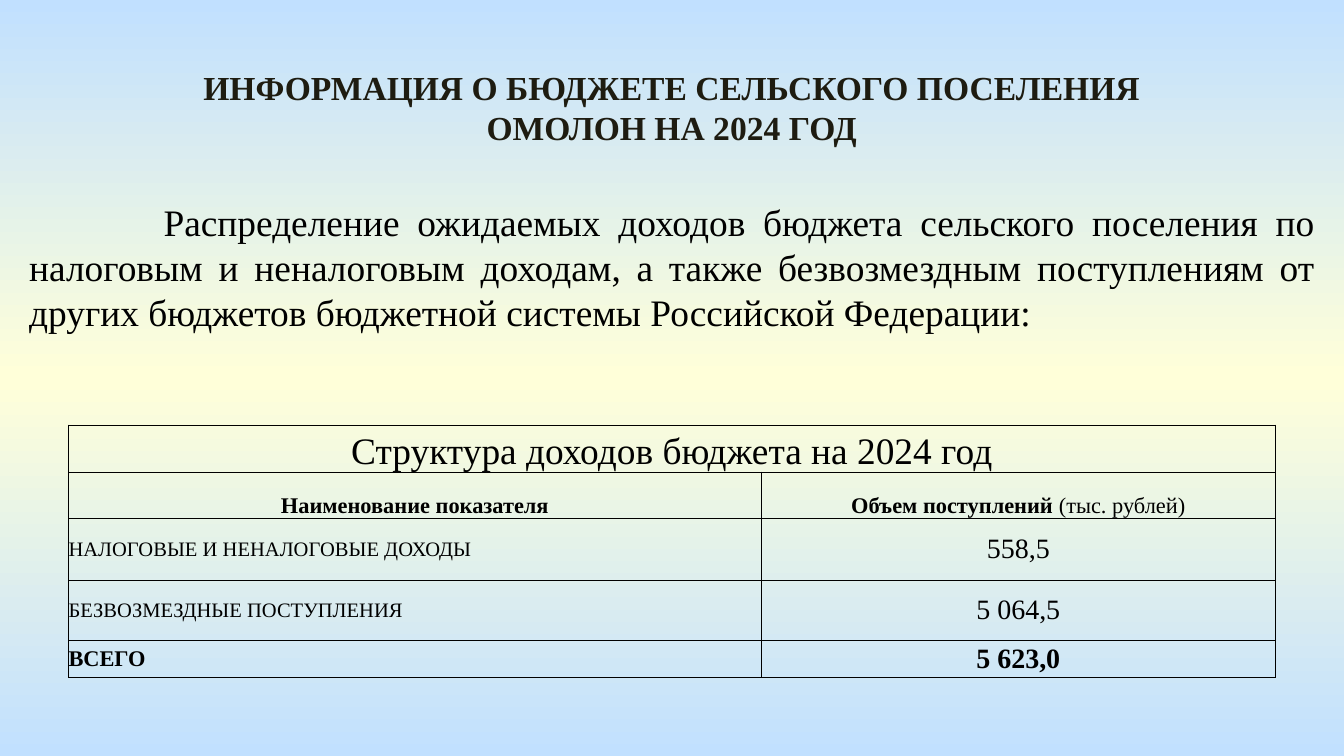
from copy import deepcopy

from lxml.etree import SubElement
from pptx import Presentation
from pptx.dml.color import RGBColor
from pptx.enum.shapes import MSO_SHAPE
from pptx.enum.text import MSO_ANCHOR, MSO_AUTO_SIZE, PP_ALIGN
from pptx.oxml.ns import qn
from pptx.util import Pt

COLORS = {"sky": "C1E0FF", "cream": "FFFFD9", "text": "000000", "title": "1E1C11"}
INTRO = ("Распределение ожидаемых доходов бюджета сельского поселения по налоговым "
         "и неналоговым доходам, а также безвозмездным поступлениям от других "
         "бюджетов бюджетной системы Российской Федерации:")
INCOME = [
    ("НАЛОГОВЫЕ И НЕНАЛОГОВЫЕ ДОХОДЫ", "558,5"),
    ("БЕЗВОЗМЕЗДНЫЕ ПОСТУПЛЕНИЯ", "5 064,5"),
]
COLUMN_WIDTHS = [371.2, 275.3]
ROW_HEIGHTS = [25.2, 24.8, 33.2, 32, 20.2]


def rgb(name):
    return RGBColor.from_string(COLORS[name])


def write(frame, text, size=12, bold=False, color="text", align=PP_ALIGN.CENTER,
          font="Times New Roman"):
    """Add a run to the first paragraph of the frame and return the paragraph."""
    para = frame.paragraphs[0]
    para.alignment = align
    span = para.add_run()
    span.text = text
    span.font.name = font
    span.font.size = Pt(size)
    span.font.bold = bold
    span.font.color.rgb = rgb(color)
    return para


def draw_borders(cell, width=0.5):
    properties = cell._tc.get_or_add_tcPr()
    for index, side in enumerate(("lnL", "lnR", "lnT", "lnB")):
        line = SubElement(properties, qn(f"a:{side}"), w=str(Pt(width)))
        fill = SubElement(line, qn("a:solidFill"))
        SubElement(fill, qn("a:srgbClr"), val=COLORS["text"])
        properties.insert(index, line)


class BudgetSlide:
    def __init__(self, deck):
        self.slide = deck.slides.add_slide(deck.slide_layouts[5])

    def background(self, *colors):
        """Fill the background with evenly spaced vertical gradient stops."""
        fill = self.slide.background.fill
        fill.gradient()
        fill.gradient_angle = 90
        stops = self.slide.element.find(".//" + qn("a:gsLst"))
        while len(stops) < len(colors):
            stops.append(deepcopy(stops[0]))
        for index, (stop, color) in enumerate(zip(fill.gradient_stops, colors)):
            stop.position = index / (len(colors) - 1)
            stop.color.rgb = rgb(color)

    def place(self, box, left, top, width, height):
        box.left, box.top = Pt(left), Pt(top)
        box.width, box.height = Pt(width), Pt(height)

    def title(self, text, *bounds):
        box = self.slide.shapes.title
        self.place(box, *bounds)
        frame = box.text_frame
        frame.word_wrap = True
        frame.auto_size = MSO_AUTO_SIZE.NONE
        frame.vertical_anchor = MSO_ANCHOR.TOP
        write(frame, text, size=18, bold=True, color="title")

    def panel(self, text, *bounds, indent=72):
        """Add a rectangle of text that shows the slide background as its fill."""
        box = self.slide.shapes.add_shape(MSO_SHAPE.RECTANGLE, *map(Pt, bounds))
        box.shadow.inherit = False
        box.line.fill.background()
        box.element.remove(box.element.find(qn("p:style")))
        box.element.set("useBgFill", "1")
        frame = box.text_frame
        frame.word_wrap = True
        frame.auto_size = MSO_AUTO_SIZE.SHAPE_TO_FIT_TEXT
        frame.vertical_anchor = MSO_ANCHOR.TOP
        para = write(frame, text, size=20, align=PP_ALIGN.JUSTIFY)
        para._p.get_or_add_pPr().set("indent", str(Pt(indent)))

    def table(self, left, top, widths, heights):
        shape = self.slide.shapes.add_table(
            len(heights), len(widths), Pt(left), Pt(top),
            Pt(sum(widths)), Pt(sum(heights)))
        table = shape.table
        table.first_row = table.horz_banding = False
        for column, width in zip(table.columns, widths):
            column.width = Pt(width)
        for row, height in zip(table.rows, heights):
            row.height = Pt(height)
        for cell in table.iter_cells():
            cell.margin_left = cell.margin_right = 0
            cell.margin_top = cell.margin_bottom = 0
            cell.vertical_anchor = MSO_ANCHOR.MIDDLE
            cell.fill.background()
            draw_borders(cell)
        return table

    def income_table(self):
        table = self.table(36.7, 227.7, COLUMN_WIDTHS, ROW_HEIGHTS)
        heading = table.cell(0, 0)
        heading.merge(table.cell(0, 1))
        name, amount = table.cell(1, 0), table.cell(1, 1)
        for cell in (heading, name, amount):
            cell.vertical_anchor = MSO_ANCHOR.BOTTOM
        amount.margin_left = amount.margin_right = Pt(5)
        write(heading.text_frame, "Структура доходов бюджета на 2024 год", size=20)
        write(name.text_frame, "Наименование показателя", bold=True)
        write(amount.text_frame, "Объем поступлений ", bold=True)
        write(amount.text_frame, "(тыс. рублей)")

        rows = [(*entry, 11, False) for entry in INCOME]
        rows.append(("ВСЕГО", "5 623,0", 12, True))
        for index, (label, value, size, bold) in enumerate(rows, start=2):
            write(table.cell(index, 0).text_frame, label, size=size, bold=bold,
                  align=PP_ALIGN.LEFT)
            write(table.cell(index, 1).text_frame, value, size=15, bold=bold)


def main():
    deck = Presentation()
    deck.slide_width, deck.slide_height = Pt(720), Pt(405)
    page = BudgetSlide(deck)
    page.background("sky", "cream", "sky")
    page.panel(INTRO, 8.5, 103.2, 703.2, 80)
    page.title("ИНФОРМАЦИЯ О БЮДЖЕТЕ СЕЛЬСКОГО ПОСЕЛЕНИЯ ОМОЛОН НА 2024 ГОД",
               81.7, 32.2, 556.5, 51)
    page.income_table()
    deck.save("out.pptx")


if __name__ == "__main__":
    main()
